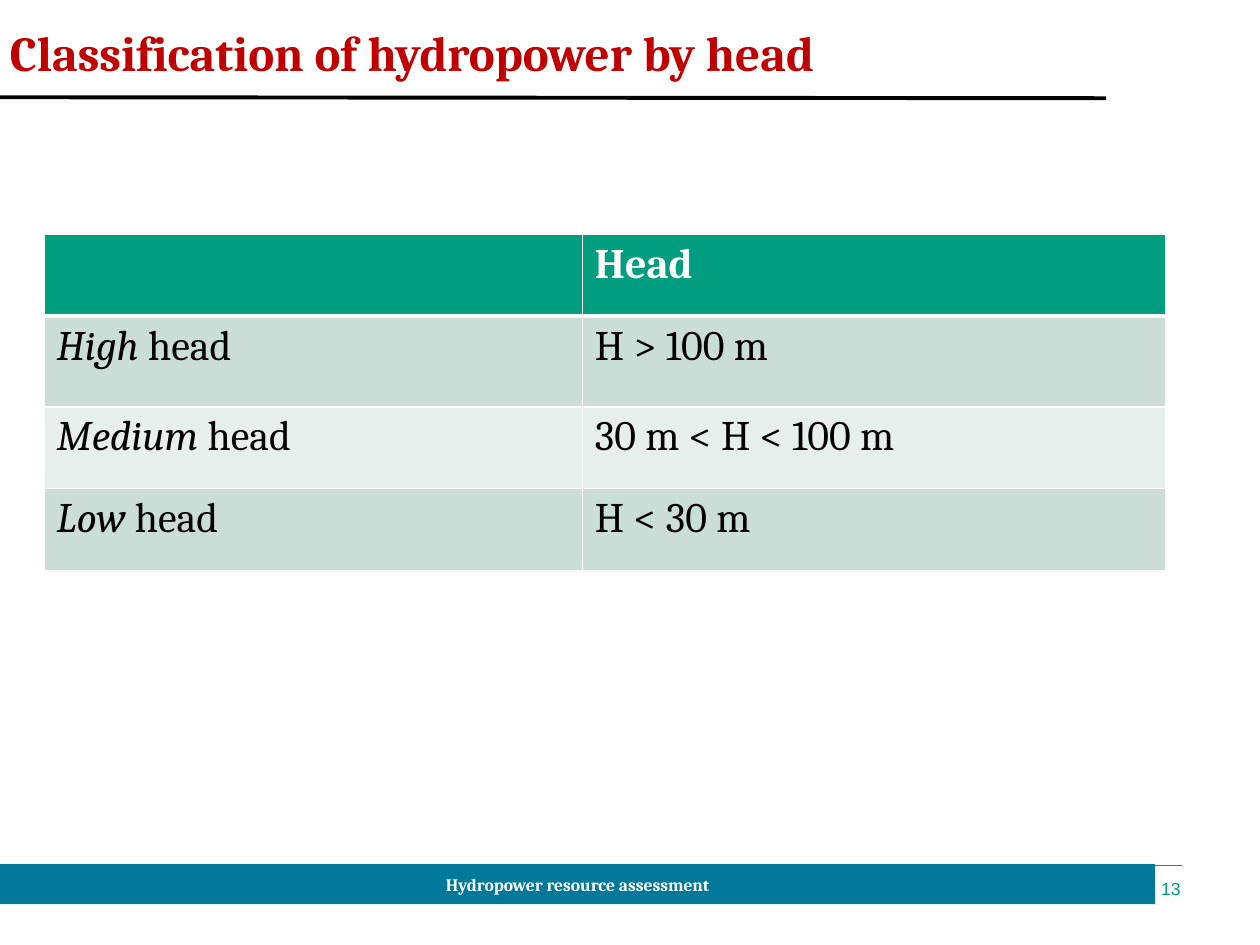
from dataclasses import dataclass

import pptx
import pptx.dml.color
import pptx.enum.shapes
import pptx.enum.text
import pptx.oxml.ns
import pptx.oxml.xmlchemy
import pptx.util
from lxml import etree

Cm = pptx.util.Cm
Pt = pptx.util.Pt
Align = pptx.enum.text.PP_ALIGN
Anchor = pptx.enum.text.MSO_ANCHOR
qn = pptx.oxml.ns.qn

GREEN = "009D7F"
BLUE = "007899"
RED = "C00000"
WHITE = "FFFFFF"
BLACK = "000000"
BANDS = ("CADED7", "E6EFEC")


@dataclass
class Run:
    text: str
    size: float = 24
    color: str = BLACK
    bold: bool = False
    italic: bool = False
    font: str = "Cambria"


@dataclass
class Box:
    left: float
    top: float
    width: float
    height: float

    def lengths(self) -> tuple:
        return Cm(self.left), Cm(self.top), Cm(self.width), Cm(self.height)


@dataclass
class Line:
    start: tuple[float, float]
    end: tuple[float, float]
    color: str
    width: float


@dataclass
class HeadClass:
    name: str
    limits: str
    height: float


HEAD_CLASSES = [
    HeadClass("High ", "H > 100 m", 1.83),
    HeadClass("Medium ", "30 m < H < 100 m", 1.65),
    HeadClass("Low ", "H < 30 m", 1.65),
]


def rgb(value: str) -> pptx.dml.color.RGBColor:
    return pptx.dml.color.RGBColor.from_string(value)


def write(text_frame, runs: list[Run], alignment=Align.LEFT) -> None:
    paragraph = text_frame.paragraphs[0]
    paragraph.alignment = alignment
    for item in runs:
        run = paragraph.add_run()
        run.text = item.text
        run.font.name = item.font
        run.font.size = Pt(item.size)
        run.font.bold = item.bold
        run.font.italic = item.italic
        run.font.color.rgb = rgb(item.color)


def draw_line(slide, line: Line) -> None:
    points = [Cm(value) for value in line.start + line.end]
    connector = slide.shapes.add_connector(
        pptx.enum.shapes.MSO_CONNECTOR.STRAIGHT, *points
    )
    connector.line.color.rgb = rgb(line.color)
    connector.line.width = Pt(line.width)
    etree.SubElement(connector._element.spPr, qn("a:effectLst"))


def draw_text(slide, box: Box, run: Run, alignment=Align.LEFT):
    text_frame = slide.shapes.add_textbox(*box.lengths()).text_frame
    text_frame.word_wrap = True
    write(text_frame, [run], alignment)
    return text_frame


def draw_footer(slide) -> None:
    draw_line(slide, Line((1.6, 17.45), (23.82, 17.45), GREEN, 1))
    number = draw_text(
        slide,
        Box(22.96, 17.7, 0.84, 0.43),
        Run("13", size=10, color=GREEN, font="Arial"),
        Align.RIGHT,
    )
    number.margin_left = number.margin_right = 0
    number.margin_top = number.margin_bottom = 0
    number.vertical_anchor = Anchor.MIDDLE

    band = slide.shapes.add_shape(
        pptx.enum.shapes.MSO_SHAPE.RECTANGLE, *Box(0, 17.42, 23.29, 0.81).lengths()
    )
    band.shadow.inherit = False
    band.fill.solid()
    band.fill.fore_color.rgb = rgb(BLUE)
    band.line.fill.background()
    band.text_frame.vertical_anchor = Anchor.MIDDLE
    footer = Run("Hydropower resource assessment", size=10, color=WHITE, bold=True)
    write(band.text_frame, [footer], Align.CENTER)


def style_cell(cell, fill: str, top: float, bottom: float) -> None:
    properties = cell._tc.get_or_add_tcPr()
    for side, width in (("L", 1), ("R", 1), ("T", top), ("B", bottom)):
        border = etree.SubElement(properties, qn(f"a:ln{side}"), w=str(Pt(width)))
        solid = etree.SubElement(border, qn("a:solidFill"))
        etree.SubElement(solid, qn("a:srgbClr"), val=WHITE)
    cell.fill.solid()
    cell.fill.fore_color.rgb = rgb(fill)


def draw_table(slide) -> None:
    columns = (10.85, 11.76)
    heights = [1.65] + [item.height for item in HEAD_CLASSES]
    contents = [[[], [Run("Head", color=WHITE, bold=True)]]]
    for item in HEAD_CLASSES:
        name = [Run(item.name, italic=True), Run("head")]
        contents.append([name, [Run(item.limits)]])

    box = Box(0.89, 4.72, sum(columns), sum(heights))
    table = slide.shapes.add_table(
        len(heights), len(columns), *box.lengths()
    ).table
    for column, width in zip(table.columns, columns):
        column.width = Cm(width)
    for index, (row, height) in enumerate(zip(table.rows, heights)):
        row.height = Cm(height)
        fill = BANDS[(index - 1) % 2] if index else GREEN
        for cell, runs in zip(row.cells, contents[index]):
            style_cell(cell, fill, 3 if index == 1 else 1, 1 if index else 3)
            write(cell.text_frame, runs)


def main() -> None:
    presentation = pptx.Presentation()
    presentation.slide_width = Cm(25.4)
    presentation.slide_height = Cm(19.05)
    slide = presentation.slides.add_slide(presentation.slide_layouts[6])
    draw_footer(slide)
    draw_text(
        slide,
        Box(-0.05, 0.33, 20.12, 1.45),
        Run("Classification of hydropower by head", size=28, color=RED, bold=True),
    )
    draw_table(slide)
    draw_line(slide, Line((0, 1.96), (22.3, 1.98), BLACK, 2.25))
    presentation.save("out.pptx")


if __name__ == "__main__":
    main()
